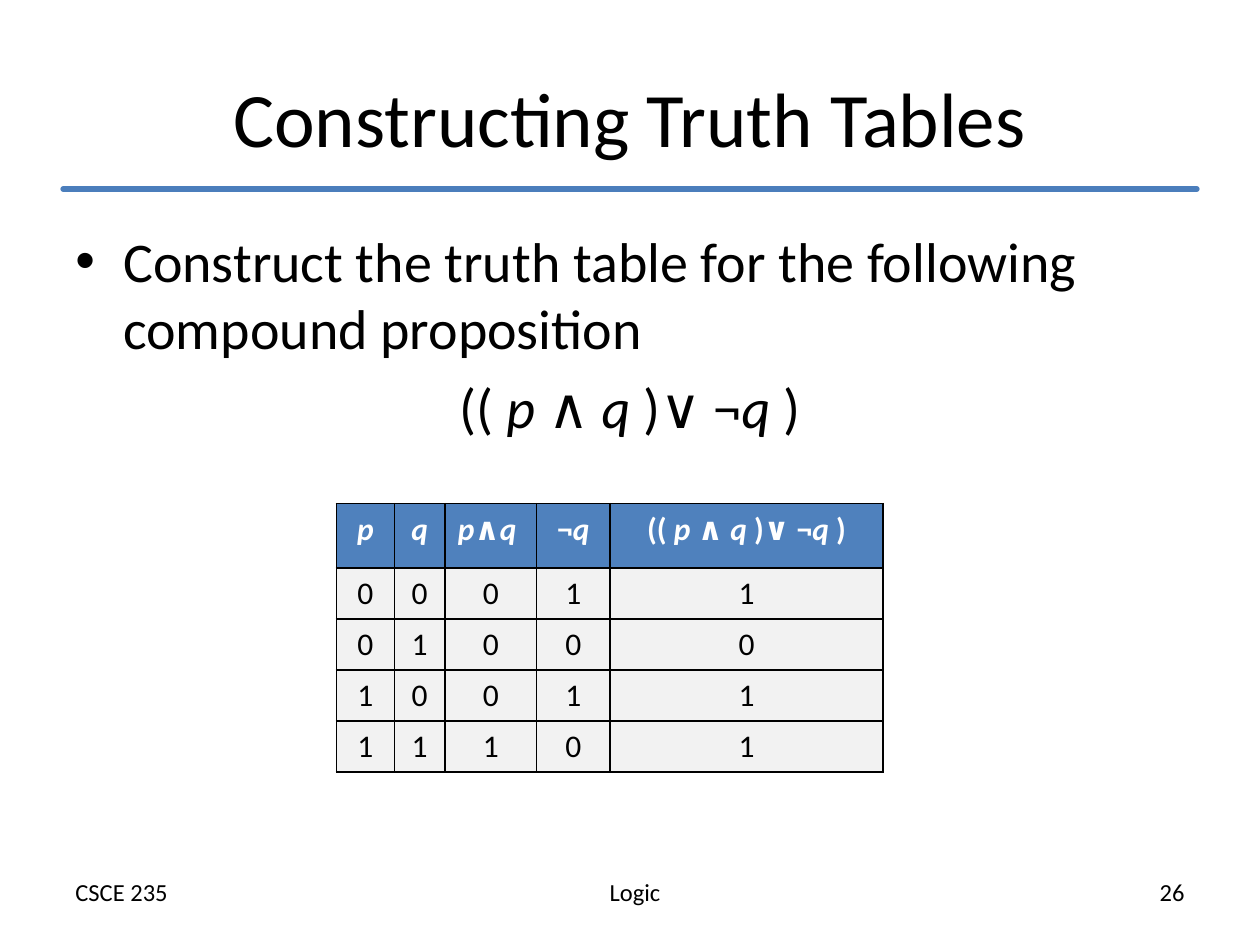
"""Build a slide that works out the truth table of a compound proposition."""
from lxml.etree import SubElement
from pptx import Presentation
from pptx.dml.color import RGBColor
from pptx.enum.shapes import MSO_CONNECTOR
from pptx.enum.text import MSO_ANCHOR, PP_ALIGN
from pptx.oxml import parse_xml
from pptx.oxml.ns import nsdecls, qn
from pptx.util import Inches, Pt

rgb = RGBColor.from_string


def write(p, runs, size, align, color="000000", bold=False):
    p.alignment = align
    for text in runs:
        r = p.add_run()
        r.text = text
        r.font.name = "Calibri"
        r.font.size = Pt(size)
        r.font.bold = bold
        r.font.italic = text.strip() in ("p", "q")
        r.font.color.rgb = rgb(color)


def add_box(x, y, w, h, anchor=MSO_ANCHOR.TOP):
    sp = s.shapes.add_textbox(int(x * W), int(y * H), int(w * W), int(h * H))
    tf = sp.text_frame
    tf.word_wrap = True
    tf.vertical_anchor = anchor
    return tf


prs = Presentation()
prs.slide_width, prs.slide_height = Inches(10), Inches(7.5)
W, H = prs.slide_width, prs.slide_height
s = prs.slides.add_slide(prs.slide_layouts[6])
left, center, right = PP_ALIGN.LEFT, PP_ALIGN.CENTER, PP_ALIGN.RIGHT
margin, content = 0.05, 0.9
formula = ["(( ", "p ", "∧ ", "q", " )∨ ¬", "q", " )"]

footers = [("CSCE 235", margin, left), ("Logic", 0.358, center), ("26", 0.658, right)]
for text, x, align in footers:
    tf = add_box(x, 0.922, 0.292, 0.045)
    write(tf.paragraphs[0], [text], 14, align)

rule = s.shapes.add_connector(MSO_CONNECTOR.STRAIGHT, int(margin * W), int(0.2 * H),
                              int((margin + content) * W), int(0.2 * H))
rule.line.color.rgb = rgb("4B7EBC")
rule.line.width = Pt(3)
rule.line._get_or_add_ln().set("cap", "rnd")
SubElement(rule._element.spPr, qn("a:effectLst"))

tf = add_box(margin, 0.04, content, 0.167, MSO_ANCHOR.MIDDLE)
write(tf.paragraphs[0], ["Constructing Truth Tables"], 44, center)

tf = add_box(margin, 0.233, content, 0.66)
task = "Construct the truth table for the following compound proposition"
for p, runs, align, bullet in [(tf.paragraphs[0], [task], left, True),
                               (tf.add_paragraph(), formula, center, False)]:
    write(p, runs, 32, align)
    p.space_before = Pt(6.4)
    pPr = p._p.get_or_add_pPr()
    pPr.set("marL", str(Inches(0.38)))
    pPr.set("indent", str(-Inches(0.38)))
    if bullet:
        SubElement(pPr, qn("a:buFont"), typeface="Arial")
        SubElement(pPr, qn("a:buChar"), char="•")

header = [["p"], ["q"], ["p", "∧", "q "], ["¬", "q"], formula]
values = ["00011", "01000", "10011", "11101"]
rows = [header] + [[[v] for v in row] for row in values]
col_shares = [0.046, 0.04, 0.073, 0.058, 0.217]
row_shares = [0.068] + [0.054] * len(values)

table = s.shapes.add_table(len(rows), len(col_shares), int(0.267 * W), int(0.533 * H),
                           int(sum(col_shares) * W), int(sum(row_shares) * H)).table
for col, share in zip(table.columns, col_shares):
    col.width = int(share * W)
for row, share in zip(table.rows, row_shares):
    row.height = int(share * H)

for i, row in enumerate(rows):
    fill, color = ("F2F2F2", "000000") if i else ("4F81BD", "FFFFFF")
    for j, runs in enumerate(row):
        cell = table.cell(i, j)
        cell.fill.solid()
        cell.fill.fore_color.rgb = rgb(fill)
        write(cell.text_frame.paragraphs[0], runs, 18, center, color, bold=i == 0)
        tcPr = cell._tc.get_or_add_tcPr()
        for k, side in enumerate("LRTB"):
            tcPr.insert(k, parse_xml(
                f'<a:ln{side} {nsdecls("a")} w="{Pt(1)}"><a:solidFill>'
                f'<a:srgbClr val="000000"/></a:solidFill></a:ln{side}>'))

prs.save("out.pptx")
